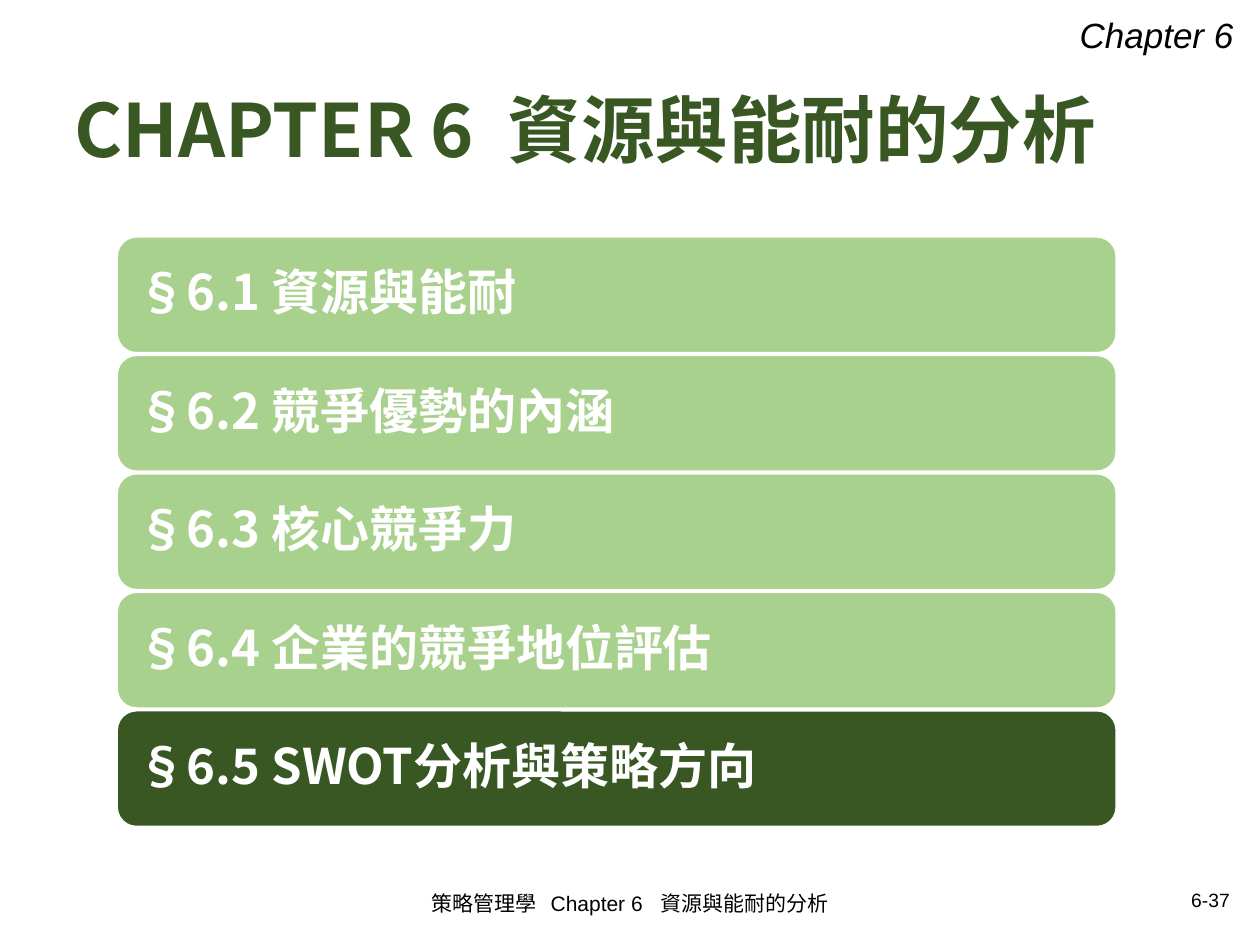
"""Build the chapter 6 agenda slide with its last section highlighted."""
import pptx
import pptx.dml.color
import pptx.enum.shapes
import pptx.enum.text
import pptx.oxml.ns
import pptx.util
from lxml import etree

Inches = pptx.util.Inches
RGBColor = pptx.dml.color.RGBColor
Align = pptx.enum.text.PP_ALIGN
Anchor = pptx.enum.text.MSO_ANCHOR

DARK_GREEN = RGBColor(0x38, 0x57, 0x23)
LIGHT_GREEN = RGBColor(0xA9, 0xD1, 0x8E)
WHITE = RGBColor(0xFF, 0xFF, 0xFF)
BLACK = RGBColor(0x00, 0x00, 0x00)
LATIN_FONT = "Arial"
CHINESE_FONT = "Noto Sans CJK SC"


def write_text(shape, text, size, color, font_name, align=Align.LEFT, bold=False, italic=False):
    """Fill a shape with one formatted paragraph."""
    frame = shape.text_frame
    frame.word_wrap = True
    frame.vertical_anchor = Anchor.MIDDLE
    frame.text = text
    para = frame.paragraphs[0]
    para.alignment = align
    span = para.runs[0]
    span.font.size = pptx.util.Pt(size)
    span.font.bold = bold
    span.font.italic = italic
    span.font.color.rgb = color
    span.font.name = font_name
    east_asian = etree.SubElement(span.font._element, pptx.oxml.ns.qn("a:ea"))
    east_asian.set("typeface", CHINESE_FONT)
    return para


deck = pptx.Presentation()
deck.slide_width = Inches(10)
deck.slide_height = Inches(7.5)
page = deck.slides.add_slide(deck.slide_layouts[5])

title = page.shapes.title
title.left, title.top = Inches(0.49), Inches(0.65)
title.width, title.height = Inches(9.02), Inches(0.82)
title_para = write_text(title, "CHAPTER 6  資源與能耐的分析", 42, DARK_GREEN, CHINESE_FONT, bold=True)
title_para.line_spacing = 0.9

footer = page.shapes.add_textbox(Inches(3.31), Inches(6.97), Inches(3.38), Inches(0.4))
write_text(footer, "策略管理學   Chapter 6   資源與能耐的分析", 12, BLACK, LATIN_FONT, Align.CENTER)

page_number = page.shapes.add_textbox(Inches(7.06), Inches(6.99), Inches(2.8), Inches(0.3))
write_text(page_number, "6-37", 11, BLACK, LATIN_FONT, Align.RIGHT)

chapter_label = page.shapes.add_textbox(Inches(8.47), Inches(0.05), Inches(1.43), Inches(0.44))
write_text(chapter_label, "Chapter 6", 20, BLACK, LATIN_FONT, italic=True)
chapter_label.text_frame.word_wrap = False

sections = [
    "§6.1 資源與能耐",
    "§6.2 競爭優勢的內涵",
    "§6.3 核心競爭力",
    "§6.4 企業的競爭地位評估",
    "§6.5 SWOT分析與策略方向",
]
current_section = sections[-1]
bar_pitch = 0.94

for index, section in enumerate(sections):
    bar = page.shapes.add_shape(
        pptx.enum.shapes.MSO_SHAPE.ROUNDED_RECTANGLE,
        Inches(0.93), Inches(1.88 + index * bar_pitch), Inches(7.93), Inches(0.92),
    )
    bar.shadow.inherit = False
    bar.fill.solid()
    bar.fill.fore_color.rgb = DARK_GREEN if section == current_section else LIGHT_GREEN
    bar.line.color.rgb = WHITE
    bar.line.width = pptx.util.Pt(1)
    bar.text_frame.margin_left = bar.text_frame.margin_right = Inches(0.12)
    section_para = write_text(bar, section, 28, WHITE, CHINESE_FONT, bold=True)
    section_para.line_spacing = 0.9

deck.save("out.pptx")
